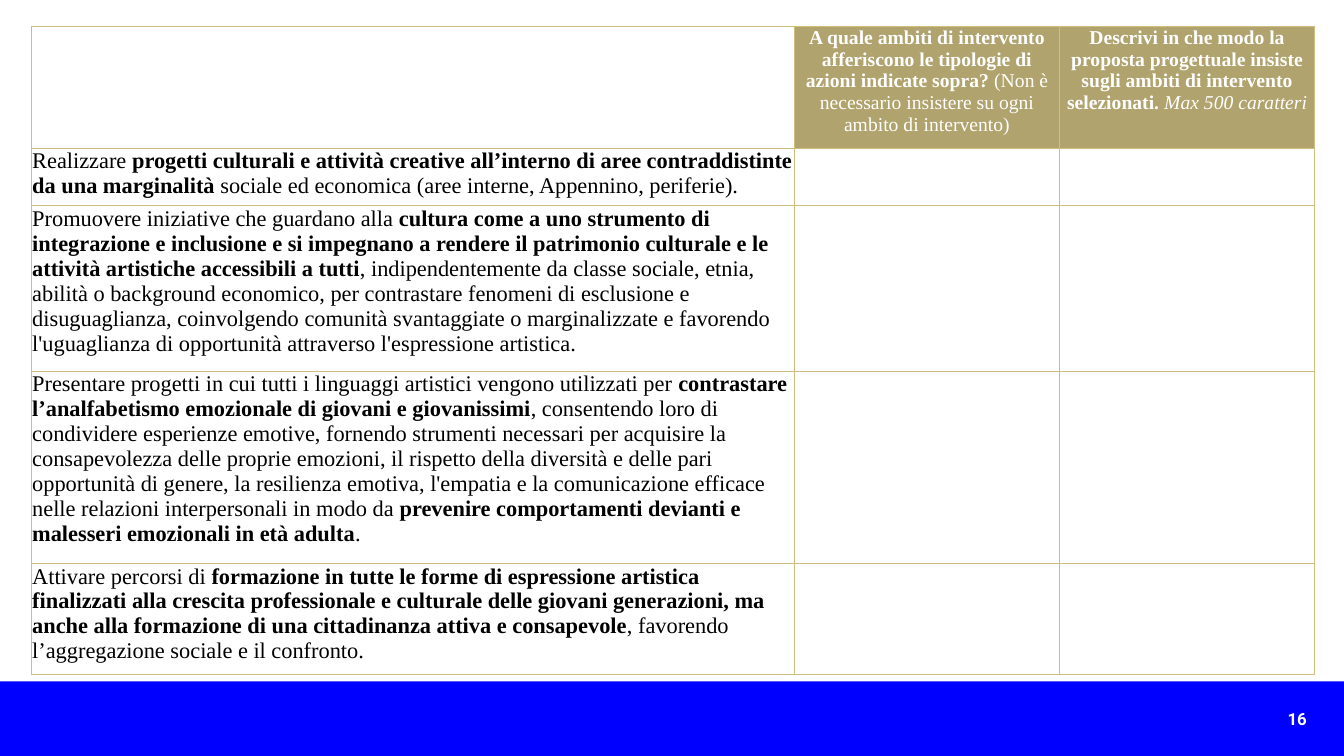
from lxml import etree
from pptx import Presentation
from pptx import util as u
from pptx.dml.color import RGBColor
from pptx.enum import shapes, text
from pptx.oxml import ns

WHITE = RGBColor(0xFF, 0xFF, 0xFF)
BLACK = RGBColor(0, 0, 0)
BLUE = RGBColor(0, 0, 0xFF)
KHAKI = RGBColor(0xB0, 0xA3, 0x6D)
GOLD = RGBColor(0xCF, 0xBE, 0x7E)
SERIF, SANS = "Times New Roman", "Roboto"
COLS = [7.57, 2.63, 2.53]
ROWS = [1.2, 0.57, 1.64, 1.9, 1.1]

HEADERS = [
    [("A quale ambiti di intervento afferiscono le tipologie di azioni indicate sopra?", "b"),
     (" (Non è necessario insistere su ogni ambito di intervento)", "")],
    [("Descrivi in che modo la proposta progettuale insiste sugli ambiti di intervento selezionati. ", "b"),
     ("Max 500 caratteri", "i")],
]
AREAS = [
    [("Realizzare ", ""),
     ("progetti culturali e attività creative all’interno di aree contraddistinte da una marginalità", "b"),
     (" sociale ed economica (aree interne, Appennino, periferie).", "")],
    [("Promuovere iniziative che guardano alla ", ""),
     ("cultura come a uno strumento di integrazione e inclusione e si impegnano a rendere il "
      "patrimonio culturale e le attività artistiche accessibili a tutti", "b"),
     (", indipendentemente da classe sociale, etnia, abilità o background economico, per contrastare "
      "fenomeni di esclusione e disuguaglianza, coinvolgendo comunità svantaggiate o marginalizzate e "
      "favorendo l'uguaglianza di opportunità attraverso l'espressione artistica.", "")],
    [("Presentare progetti in cui tutti i linguaggi artistici vengono utilizzati per ", ""),
     ("contrastare l’analfabetismo emozionale di giovani e giovanissimi", "b"),
     (", consentendo loro di condividere esperienze emotive, fornendo strumenti necessari per acquisire "
      "la consapevolezza delle proprie emozioni, il rispetto della diversità e delle pari opportunità di "
      "genere, la resilienza emotiva, l'empatia e la comunicazione efficace nelle relazioni "
      "interpersonali in modo da ", ""),
     ("prevenire comportamenti devianti e malesseri emozionali in età adulta", "b"),
     (".", "")],
    [("Attivare percorsi di ", ""),
     ("formazione in tutte le forme di espressione artistica finalizzati alla crescita professionale e "
      "culturale delle giovani generazioni, ma anche alla formazione di una cittadinanza attiva e "
      "consapevole", "b"),
     (", favorendo l’aggregazione sociale e il confronto.", "")],
]


def add_runs(p, runs, size, color, font=SERIF):
    """Add (text, style) runs to a paragraph; style is "b", "i" or empty."""
    for words, style in runs:
        r = p.add_run()
        r.text = words
        r.font.name, r.font.size = font, u.Pt(size)
        r.font.color.rgb = color
        r.font.bold, r.font.italic = style == "b", style == "i"


def format_cell(cell, fill=None):
    """Set the margins, gold borders and fill of a cell."""
    cell.margin_left = cell.margin_right = cell.margin_top = u.Inches(0.01)
    cell.margin_bottom = u.Inches(0.03)
    tc_pr = cell._tc.get_or_add_tcPr()
    for side in ("lnL", "lnR", "lnT", "lnB"):
        ln = etree.SubElement(tc_pr, ns.qn(f"a:{side}"), w=str(u.Pt(0.5)))
        solid = etree.SubElement(ln, ns.qn("a:solidFill"))
        etree.SubElement(solid, ns.qn("a:srgbClr"), val=str(GOLD))
    if fill is None:
        cell.fill.background()
    else:
        cell.fill.solid()
        cell.fill.fore_color.rgb = fill


def areas_table(s, x, y, cols, rows):
    """Draw the table of intervention areas with its top left corner at x, y."""
    table = s.shapes.add_table(len(rows), len(cols), u.Inches(x), u.Inches(y),
                               u.Inches(sum(cols)), u.Inches(sum(rows))).table
    table.first_row = table.horz_banding = False
    for column, width in zip(table.columns, cols):
        column.width = u.Inches(width)
    for row, height in zip(table.rows, rows):
        row.height = u.Inches(height)
    for i in range(len(rows)):
        for j in range(len(cols)):
            format_cell(table.cell(i, j), KHAKI if i == 0 and j > 0 else None)
    for j, runs in enumerate(HEADERS, 1):
        p = table.cell(0, j).text_frame.paragraphs[0]
        p.alignment = text.PP_ALIGN.CENTER
        add_runs(p, runs, 14, WHITE)
    for i, runs in enumerate(AREAS, 1):
        add_runs(table.cell(i, 0).text_frame.paragraphs[0], runs, 16, BLACK)


def footer(s, x, y, w, h, number):
    """Draw the blue footer band with the page number at its right."""
    sp = s.shapes.add_shape(shapes.MSO_SHAPE.RECTANGLE, x, y, w, h)
    sp.shadow.inherit = False
    sp.fill.solid()
    sp.fill.fore_color.rgb = BLUE
    sp.line.fill.background()
    box_w, box_h = u.Inches(4.24), u.Inches(0.3)
    box = s.shapes.add_textbox(x + w - box_w - u.Inches(0.27), y + (h - box_h) // 2, box_w, box_h)
    tf = box.text_frame
    tf.word_wrap = True
    tf.vertical_anchor = text.MSO_ANCHOR.MIDDLE
    p = tf.paragraphs[0]
    p.alignment = text.PP_ALIGN.RIGHT
    add_runs(p, [(number, "b")], 12, WHITE, SANS)


def main():
    """Build and save the slide."""
    prs = Presentation()
    prs.slide_width, prs.slide_height = u.Inches(13.33), u.Inches(7.5)
    s = prs.slides.add_slide(prs.slide_layouts[6])
    band = u.Inches(0.74)
    footer(s, 0, prs.slide_height - band, prs.slide_width, band, "16")
    areas_table(s, 0.31, 0.26, COLS, ROWS)
    prs.save("out.pptx")


if __name__ == "__main__":
    main()
